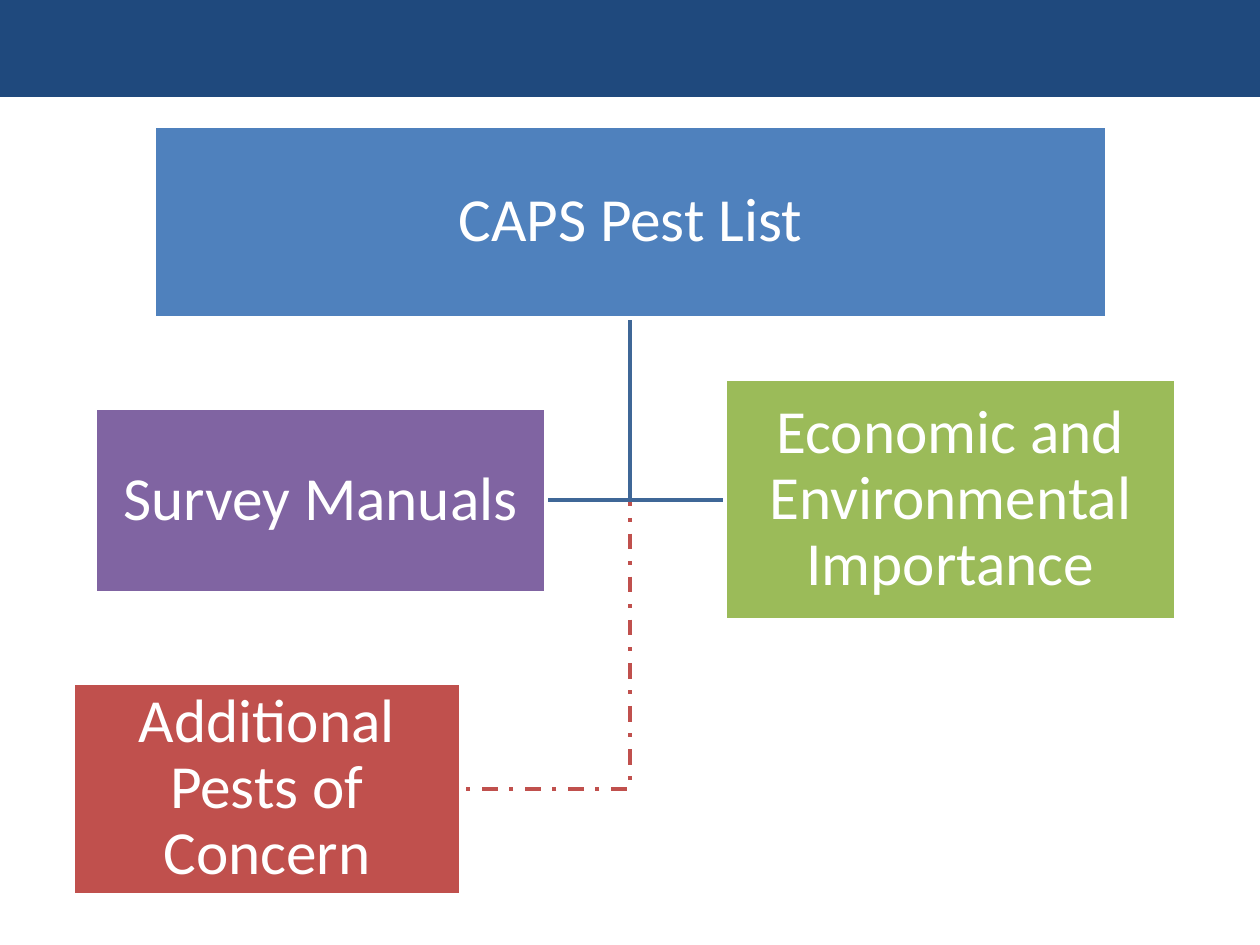
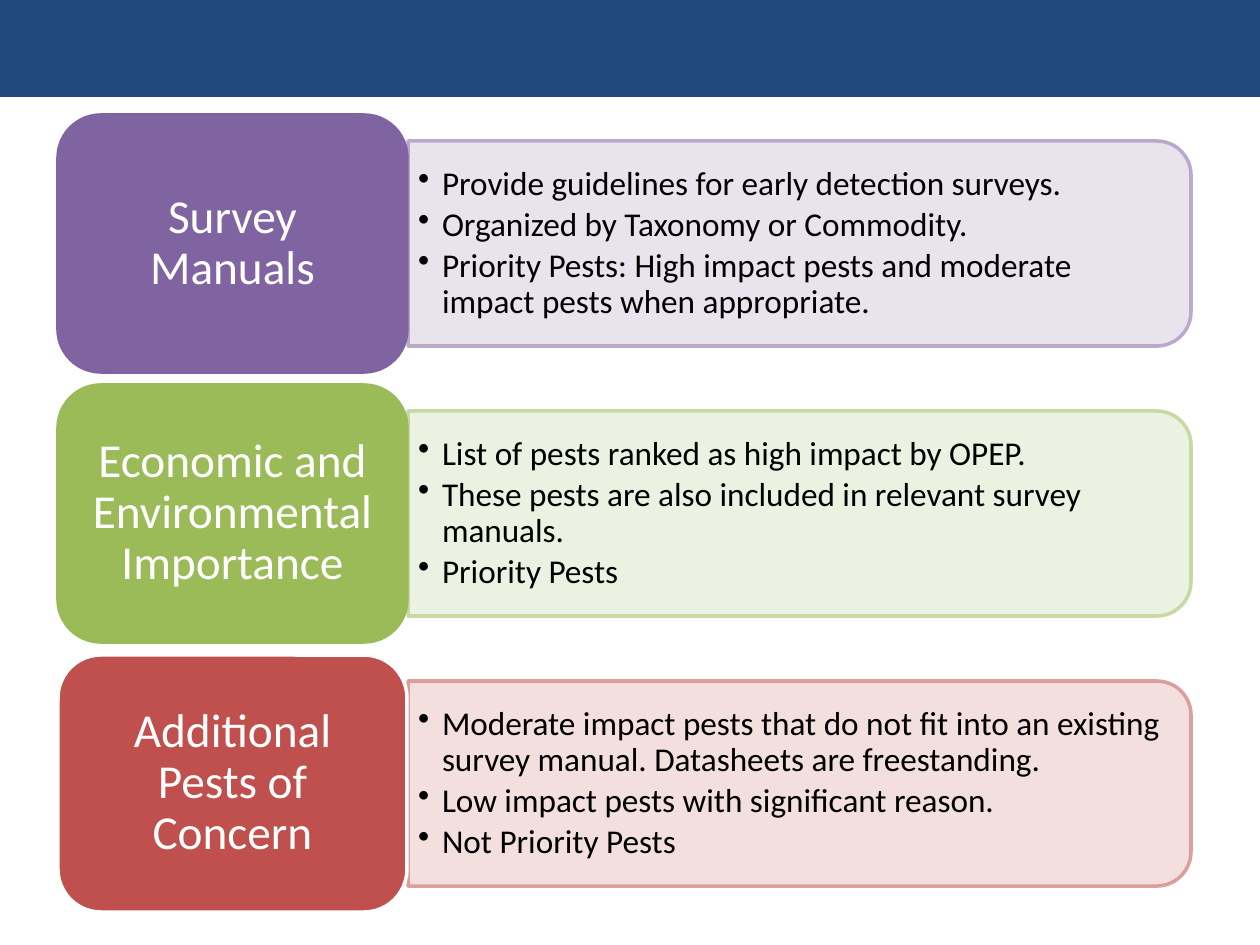
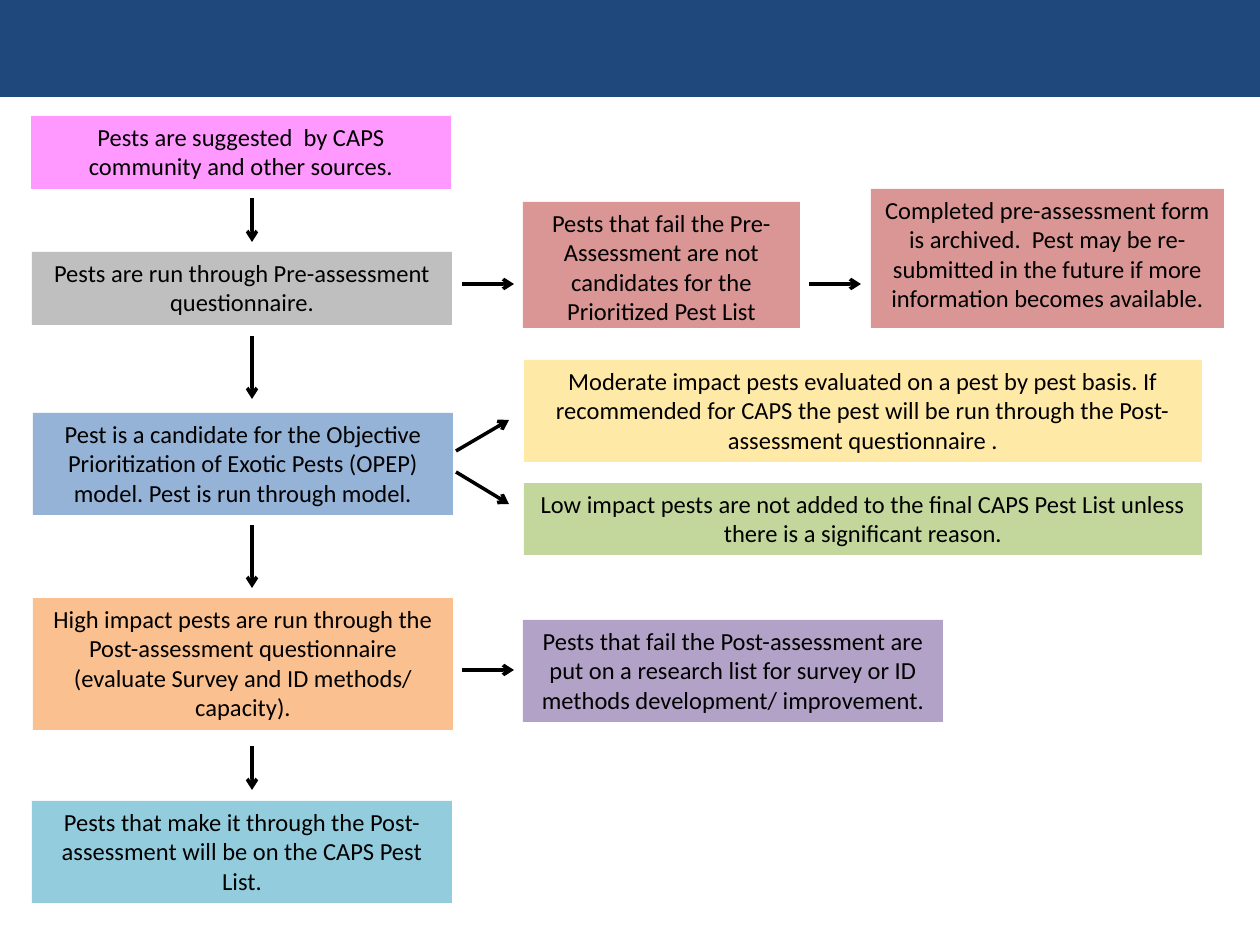
"""Build three slides on the CAPS pest list: its parts, their contents and the selection process."""
from lxml.etree import SubElement
from pptx import Presentation
from pptx.dml.color import RGBColor
from pptx.enum.dml import MSO_LINE
from pptx.enum.shapes import MSO_CONNECTOR, MSO_SHAPE as SHAPE
from pptx.enum.text import MSO_ANCHOR as ANCHOR, PP_ALIGN as ALIGN
from pptx.oxml.ns import qn
from pptx.util import Emu, Pt

FONT = "Calibri"
WHITE = RGBColor(0xFF, 0xFF, 0xFF)
BLACK = RGBColor(0x00, 0x00, 0x00)
NAVY = RGBColor(0x1F, 0x49, 0x7D)
STEEL = RGBColor(0x3F, 0x67, 0x97)
BLUE = RGBColor(0x4F, 0x81, 0xBD)
PURPLE = RGBColor(0x80, 0x64, 0xA2)
GREEN = RGBColor(0x9B, 0xBB, 0x59)
RED = RGBColor(0xC0, 0x50, 0x4D)
LILAC = RGBColor(0xB3, 0xA2, 0xC7)
LIME = RGBColor(0xC3, 0xD6, 0x9B)
ROSE = RGBColor(0xD9, 0x96, 0x94)
PALE_LILAC = RGBColor(0xE6, 0xE0, 0xEC)
PALE_LIME = RGBColor(0xEB, 0xF1, 0xDE)
PALE_ROSE = RGBColor(0xF2, 0xDC, 0xDB)
PINK = RGBColor(0xFF, 0x99, 0xFF)
GREY = RGBColor(0xBF, 0xBF, 0xBF)
SKY = RGBColor(0x95, 0xB3, 0xD7)
ORANGE = RGBColor(0xFA, 0xC0, 0x90)
AQUA = RGBColor(0x93, 0xCD, 0xDD)
YELLOW = RGBColor(0xFF, 0xE9, 0xA6)

SLIDE_W, SLIDE_H, BAND_H = 1260, 945, 97


def px(length):
    return Emu(round(length * 914400 / 126))


def write(frame, *texts, size=14, color=BLACK, align=ALIGN.CENTER, anchor=ANCHOR.TOP,
          spacing=None, after=None, inset=(13, 6), bullet_indent=0):
    frame.word_wrap = True
    frame.vertical_anchor = anchor
    frame.margin_left = frame.margin_right = px(inset[0])
    frame.margin_top = frame.margin_bottom = px(inset[1])
    for index, text in enumerate(texts):
        paragraph = frame.add_paragraph() if index else frame.paragraphs[0]
        if bullet_indent:
            properties = paragraph._p.get_or_add_pPr()
            properties.set("marL", str(px(bullet_indent)))
            properties.set("indent", str(-px(bullet_indent)))
            SubElement(properties, qn("a:buChar"), char="•")
        paragraph.alignment = align
        if spacing:
            paragraph.line_spacing = spacing
        if after:
            paragraph.space_after = Pt(after)
        run = paragraph.add_run()
        run.text = text
        run.font.name, run.font.size, run.font.color.rgb = FONT, Pt(size), color


def set_opacity(element, percent):
    for color in element.iter(qn("a:srgbClr")):
        SubElement(color, qn("a:alpha"), val=str(percent * 1000))


class Deck:
    """Hold the deck's style and the slide being drawn."""

    def __init__(self):
        self.prs = Presentation()
        self.prs.slide_width, self.prs.slide_height = px(SLIDE_W), px(SLIDE_H)

    def new_slide(self):
        self.shapes = self.prs.slides.add_slide(self.prs.slide_layouts[6]).shapes
        self.box((0, 0, SLIDE_W, BAND_H), NAVY)

    def box(self, area, fill, *texts, kind=SHAPE.RECTANGLE, line=None, **text_format):
        shape = self.shapes.add_shape(kind, *map(px, area))
        shape.shadow.inherit = False
        shape.fill.solid()
        shape.fill.fore_color.rgb = fill
        if line is None:
            shape.line.fill.background()
        else:
            shape.line.color.rgb, shape.line.width = line, Pt(2)
        if texts:
            write(shape.text_frame, *texts, **text_format)
        return shape

    def label(self, area, fill, text, size, **style):
        return self.box(area, fill, text, size=size, color=WHITE, anchor=ANCHOR.MIDDLE,
                        spacing=0.9, **style)

    def panel(self, area, fill, line):
        left, top, width, height = area
        shift = (width - height) // 2
        shape = self.box((left + shift, top - shift, height, width), fill,
                         kind=SHAPE.ROUND_2_SAME_RECTANGLE, line=line)
        shape.rotation = 90
        set_opacity(shape._element.spPr, 90)

    def bullets(self, area, texts):
        write(self.shapes.add_textbox(*map(px, area)).text_frame, *texts, size=19,
              align=ALIGN.LEFT, anchor=ANCHOR.MIDDLE, spacing=0.9, after=3,
              inset=(10, 5), bullet_indent=24)

    def branch(self, points, color, width=2, dash=None):
        (start, *rest) = [tuple(map(px, point)) for point in points]
        builder = self.shapes.build_freeform(*start)
        builder.add_line_segments(rest, close=False)
        shape = builder.convert_to_shape()
        shape.shadow.inherit = False
        shape.fill.background()
        shape.line.color.rgb, shape.line.width = color, Pt(width)
        if dash:
            shape.line.dash_style = dash

    def arrow(self, *ends):
        connector = self.shapes.add_connector(MSO_CONNECTOR.STRAIGHT, *map(px, ends))
        connector.line.color.rgb, connector.line.width = BLACK, Pt(2)
        SubElement(connector.line._get_or_add_ln(), qn("a:tailEnd"), type="arrow")
        SubElement(connector._element.spPr, qn("a:effectLst"))


def draw_structure(deck):
    deck.new_slide()
    trunk, trunk_top = SLIDE_W // 2, 318
    for end_x, end_y, color, style in (
        (461, 789, RED, {"width": 2.25, "dash": MSO_LINE.DASH_DOT}),
        (725, 500, STEEL, {}),
        (546, 500, STEEL, {}),
    ):
        deck.branch([(trunk, trunk_top), (trunk, end_y), (end_x, end_y)], color, **style)
    for area, fill, text in (
        ((154, 126, 953, 192), BLUE, "CAPS Pest List"),
        ((95, 408, 451, 185), PURPLE, "Survey Manuals"),
        ((725, 379, 451, 241), GREEN, "Economic and Environmental Importance"),
        ((73, 683, 388, 212), RED, "Additional Pests of Concern"),
    ):
        deck.label(area, fill, text, 35, line=WHITE, inset=(3, 3))


def draw_contents(deck):
    deck.new_slide()
    first_top, pitch = 115, 270
    lists = (
        ("Survey Manuals", PURPLE, PURPLE, PALE_LILAC, LILAC, (
            "Provide guidelines for early detection surveys.",
            "Organized by Taxonomy or Commodity.",
            "Priority Pests: High impact pests and moderate impact pests when appropriate.")),
        ("Economic and Environmental Importance", GREEN, GREEN, PALE_LIME, LIME, (
            "List of pests ranked as high impact by OPEP.",
            "These pests are also included in relevant survey manuals.",
            "Priority Pests")),
        ("Additional Pests of Concern", RED, WHITE, PALE_ROSE, ROSE, (
            "Moderate impact pests that do not fit into an existing survey manual. "
            "Datasheets are freestanding.",
            "Low impact pests with significant reason.",
            "Not Priority Pests")),
    )
    for row, (name, fill, edge, pale, pale_edge, points) in enumerate(lists):
        top = first_top + row * pitch
        deck.panel((408, top + 26, 783, 205), pale, pale_edge)
        deck.bullets((408, top + 36, 772, 185), points)
        deck.label((58, top, 349, 257), fill, name, 27, kind=SHAPE.ROUNDED_RECTANGLE,
                   line=edge, inset=(14, 8))


def draw_process(deck):
    deck.new_slide()
    for area, fill, text in (
        ((31, 116, 420, 73), PINK, "Pests are suggested  by CAPS community and other sources."),
        ((32, 252, 420, 73), GREY, "Pests are run through Pre-assessment questionnaire."),
        ((33, 413, 420, 102), SKY,
         "Pest is a candidate for the Objective Prioritization of Exotic Pests (OPEP) model. "
         "Pest is run through model."),
        ((33, 598, 420, 132), ORANGE,
         "High impact pests are run through the Post-assessment questionnaire "
         "(evaluate Survey and ID methods/ capacity)."),
        ((32, 801, 420, 102), AQUA,
         "Pests that make it through the Post-assessment will be on the CAPS Pest List."),
        ((523, 202, 277, 126), ROSE,
         "Pests that fail the Pre-Assessment are not candidates for the Prioritized Pest List"),
        ((871, 189, 353, 139), ROSE,
         "Completed pre-assessment form is archived.  Pest may be re-submitted in the future "
         "if more information becomes available."),
        ((524, 360, 678, 102), YELLOW,
         "Moderate impact pests evaluated on a pest by pest basis. If recommended for CAPS "
         "the pest will be run through the Post-assessment questionnaire ."),
        ((524, 483, 678, 72), LIME,
         "Low impact pests are not added to the final CAPS Pest List unless there is a "
         "significant reason."),
        ((523, 620, 420, 102), LILAC,
         "Pests that fail the Post-assessment are put on a research list for survey or ID "
         "methods development/ improvement."),
    ):
        deck.box(area, fill, text)
    for start, end in ((198, 242), (336, 399), (525, 588), (746, 790)):
        deck.arrow(252, start, 252, end)
    for left, y in ((462, 284), (809, 284), (462, 670)):
        deck.arrow(left, y, left + 52, y)
    for start, end in ((451, 420), (472, 504)):
        deck.arrow(456, start, 509, end)


def main():
    deck = Deck()
    draw_structure(deck)
    draw_contents(deck)
    draw_process(deck)
    deck.prs.save("out.pptx")


if __name__ == "__main__":
    main()
